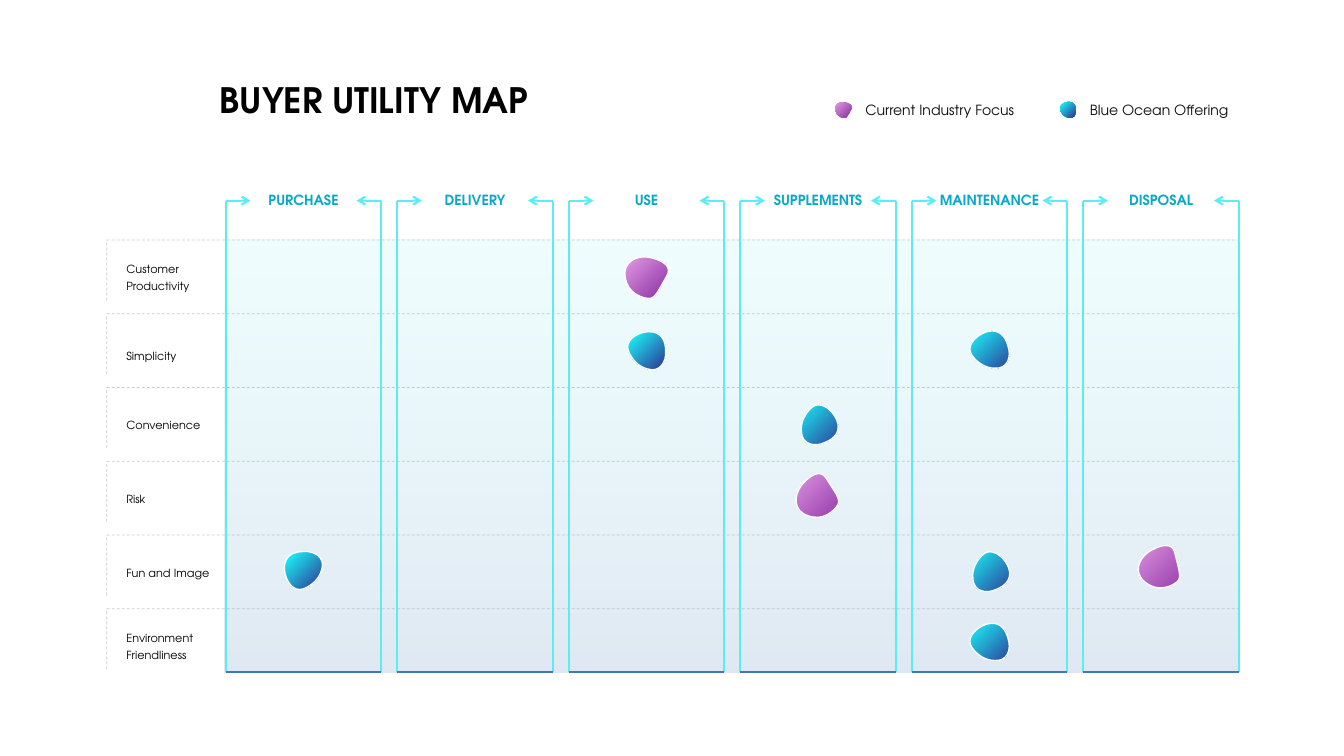
from pptx import Presentation
from pptx.dml.color import RGBColor
from pptx.enum import dml, shapes, text
from pptx.oxml import parse_xml
from pptx.oxml.ns import nsdecls, qn
from pptx.util import Pt

FONT = "TeX Gyre Adventor"
BLACK = RGBColor(0x00, 0x00, 0x00)
INK = RGBColor(0x0D, 0x0D, 0x0D)
WHITE = RGBColor(0xFF, 0xFF, 0xFF)
GREY = RGBColor(0x96, 0x96, 0x96)
TEAL = RGBColor(0x09, 0xA8, 0xC6)
AQUA = RGBColor(0x5C, 0xEC, 0xF4)
BLUE = RGBColor(0x40, 0x78, 0xB7)
NAVY = RGBColor(0x2D, 0x31, 0x92)
CYAN = RGBColor(0x1B, 0xFE, 0xFE)
PURPLE = RGBColor(0x89, 0x2E, 0xA2)
PINK = RGBColor(0xE5, 0x9D, 0xE6)

DOWN = '<a:lin ang="5400000" scaled="0"/>'
FROM_CORNER = '<a:path path="circle"><a:fillToRect l="100000" t="100000"/></a:path>'

# Stage and the width of its heading
STAGES = [("PURCHASE", 64.8), ("DELIVERY", 58.3), ("USE", 31.7),
          ("SUPPLEMENTS", 78.5), ("MAINTENANCE", 86.4), ("DISPOSAL", 61.2)]
STAGE_PITCH, STAGE_WIDTH = 122.5, 111
# Utility lever, distance from its row's top to the label's middle, label height
LEVERS = [("Customer Productivity", 25.5, 32.4), ("Simplicity", 28.9, 19.4),
          ("Convenience", 25.5, 19.4), ("Risk", 25.5, 19.4),
          ("Fun and Image", 25.8, 32.4), ("Environment Friendliness", 25.5, 32.4)]
LEVER_PITCH = 52.7

# Outlines around their centre, in hundredths of an inch:
# a start point, then Bezier curves of two controls and an end
PEBBLE = [(-21, 0), (-24, -15), (-10, -22), (2, -20), (13, -18), (27, -12), (20, -1),
          (13, 11), (9, 21), (3, 21), (-4, 21), (-19, 16), (-21, 0)]
GEM = [(3, -19), (14, -19), (19, -11), (19, 0), (20, 11), (13, 22), (1, 18),
       (-8, 16), (-15, 8), (-18, 0), (-22, -10), (-10, -18), (1, -19),
       (1, -19), (2, -19), (3, -19)]
# Outline, its width and height, gradient
INDUSTRY = (PEBBLE, 44, 41, [(0, PURPLE, 100), (100, PINK, 100)])
OFFERING = (GEM, 38, 38, [(0, NAVY, 100), (96, CYAN, 100)])
# Kind, stage, lever, distance from the row's top, turn in degrees
MARKERS = [(INDUSTRY, 2, 0, 26.7, 0), (OFFERING, 0, 4, 25.4, 270), (OFFERING, 3, 2, 26.5, 69.2),
           (OFFERING, 2, 1, 26.5, 0), (INDUSTRY, 3, 3, 25.5, 297.9),
           (OFFERING, 4, 4, 26, 69.2), (OFFERING, 4, 5, 24.5, 346.1),
           (OFFERING, 4, 1, 26.5, 346.1), (INDUSTRY, 5, 4, 23.5, 317)]


def fill_gradient(sp, stops, direction):
    """Fill with stops of (position %, colour, opacity %)."""
    gs = "".join(f'<a:gs pos="{pos * 1000}"><a:srgbClr val="{color}">'
                 f'<a:alpha val="{alpha * 1000}"/></a:srgbClr></a:gs>'
                 for pos, color, alpha in stops)
    sp.fill.background()
    props = sp._element.spPr
    props.replace(props.find(qn("a:noFill")), parse_xml(
        f'<a:gradFill {nsdecls("a")} rotWithShape="1">'
        f'<a:gsLst>{gs}</a:gsLst>{direction}</a:gradFill>'))


def add_line(slide, x1, y1, x2, y2, color, width=1.5, arrow=False):
    cn = slide.shapes.add_connector(shapes.MSO_CONNECTOR.STRAIGHT,
                                    Pt(x1), Pt(y1), Pt(x2), Pt(y2))
    cn.line.color.rgb, cn.line.width = color, Pt(width)
    if arrow:
        cn.line._get_or_add_ln().append(parse_xml(f'<a:tailEnd {nsdecls("a")} type="arrow"/>'))
    cn._element.spPr.append(parse_xml(f'<a:effectLst {nsdecls("a")}/>'))
    return cn


def add_dashed(slide, *ends):
    cn = add_line(slide, *ends, GREY, 0.5)
    cn.line.dash_style = dml.MSO_LINE.DASH
    color = cn.line._get_or_add_ln().find(".//" + qn("a:srgbClr"))
    color.append(parse_xml(f'<a:alpha {nsdecls("a")} val="50000"/>'))


def add_text(slide, words, x, middle, w, h, size, color, bold=False, centred=False,
             leading=None, wrap=True):
    """Place a text box whose vertical centre is at middle."""
    tf = slide.shapes.add_textbox(Pt(x), Pt(middle - h / 2), Pt(w), Pt(h)).text_frame
    tf.word_wrap = wrap
    tf.auto_size = text.MSO_AUTO_SIZE.SHAPE_TO_FIT_TEXT
    tf.vertical_anchor = text.MSO_ANCHOR.MIDDLE if wrap else text.MSO_ANCHOR.TOP
    p = tf.paragraphs[0]
    p.alignment = text.PP_ALIGN.CENTER if centred else text.PP_ALIGN.LEFT
    if leading:
        p.line_spacing = Pt(leading)
    r = p.add_run()
    r.text = words
    r.font.name, r.font.size, r.font.bold = FONT, Pt(size), bold
    r.font.color.rgb = color


def curve_outline(sp, points, w, h):
    """Turn the straight sides of a freeform into Bezier curves in a w by h box."""
    outline = sp._element.spPr.find(".//" + qn("a:path"))
    outline.set("w", str(w * 100))
    outline.set("h", str(h * 100))
    pts = [f'<a:pt x="{x * 100 + w * 50}" y="{y * 100 + h * 50}"/>' for x, y in points]
    parts = [f'<a:moveTo {nsdecls("a")}>{pts[0]}</a:moveTo>']
    parts += [f'<a:cubicBezTo {nsdecls("a")}>{"".join(pts[i:i + 3])}</a:cubicBezTo>'
              for i in range(1, len(pts), 3)]
    parts.append(f'<a:close {nsdecls("a")}/>')
    for old in list(outline):
        outline.remove(old)
    for part in parts:
        outline.append(parse_xml(part))


def add_marker(slide, kind, cx, cy, turn=0, scale=1.0, edged=True):
    points, w, h, stops = kind
    unit = 0.72 * scale
    corners = [(Pt(x), Pt(y)) for x, y in points[::3]]
    builder = slide.shapes.build_freeform(*corners[0])
    builder.add_line_segments(corners[1:], close=True)
    sp = builder.convert_to_shape()
    curve_outline(sp, points, w, h)
    sp.left, sp.top = Pt(cx - w * unit / 2), Pt(cy - h * unit / 2)
    sp.width, sp.height = Pt(w * unit), Pt(h * unit)
    sp.rotation = turn
    sp.shadow.inherit = False
    fill_gradient(sp, stops, FROM_CORNER)
    if edged:
        sp.line.color.rgb, sp.line.width = WHITE, Pt(1)
    else:
        sp.line.fill.background()


def add_panel(slide, x, y, w, h):
    sp = slide.shapes.add_shape(shapes.MSO_SHAPE.RECTANGLE, Pt(x), Pt(y), Pt(w), Pt(h))
    sp.shadow.inherit = False
    sp.line.fill.background()
    fill_gradient(sp, [(0, AQUA, 10), (100, BLUE, 17)], DOWN)


def add_lever(slide, name, middle, height, x, y, w):
    add_dashed(slide, x, y, x + w, y)
    add_dashed(slide, x, y + 43.2, x, y)
    add_text(slide, name, x + 6.9, y + middle, 80, height, 8, BLACK, leading=12)


def add_stage(slide, name, name_width, x, y, w, h):
    """Draw an open frame whose top arrows point at the stage name."""
    right, bottom, arrow = x + w, y + h, 17.6
    add_line(slide, x, y, x, bottom, AQUA)
    add_line(slide, right, y, right, bottom, AQUA)
    add_line(slide, x, bottom, right, bottom, BLUE)
    add_line(slide, x, y, x + arrow, y, AQUA, arrow=True)
    add_line(slide, right, y, right - arrow, y, AQUA, arrow=True)
    add_text(slide, name, x + (w - name_width) / 2, y - 0.4, name_width, 19.4, 10, TEAL,
             bold=True, centred=True, wrap=False)


def add_map(slide, x, y, w, h):
    """Draw the grid; x is where the lever labels start, y the top of the first row."""
    first, head = x + 85, 28.1
    add_panel(slide, first - 0.7, y, 723.6, h)
    for i, (name, middle, height) in enumerate(LEVERS):
        add_lever(slide, name, middle, height, x, y + i * LEVER_PITCH, w)
    for i, (name, width) in enumerate(STAGES):
        add_stage(slide, name, width, first + i * STAGE_PITCH, y - head, STAGE_WIDTH, h + head)
    for kind, stage, lever, drop, turn in MARKERS:
        add_marker(slide, kind, first + stage * STAGE_PITCH + STAGE_WIDTH / 2,
                   y + lever * LEVER_PITCH + drop, turn)


def add_legend(slide, x, middle):
    entries = [(INDUSTRY, "Current Industry Focus", 0.38), (OFFERING, "Blue Ocean Offering", 0.42)]
    for i, (kind, name, scale) in enumerate(entries):
        cx = x + i * 160.3
        add_marker(slide, kind, cx, middle, scale=scale, edged=False)
        add_text(slide, name, cx + 8.7, middle + 0.4, 125.3, 19.4, 10, INK)


def main():
    prs = Presentation()
    prs.slide_width, prs.slide_height = Pt(960), Pt(540)
    slide = prs.slides.add_slide(prs.slide_layouts[6])
    add_map(slide, 76.3, 171.4, 809.3, 308.9)
    add_text(slide, "BUYER UTILITY MAP", 149.8, 71.3, 237, 37.4, 25, BLACK, bold=True, wrap=False)
    add_legend(slide, 602.4, 78.5)
    prs.save("out.pptx")


if __name__ == "__main__":
    main()
